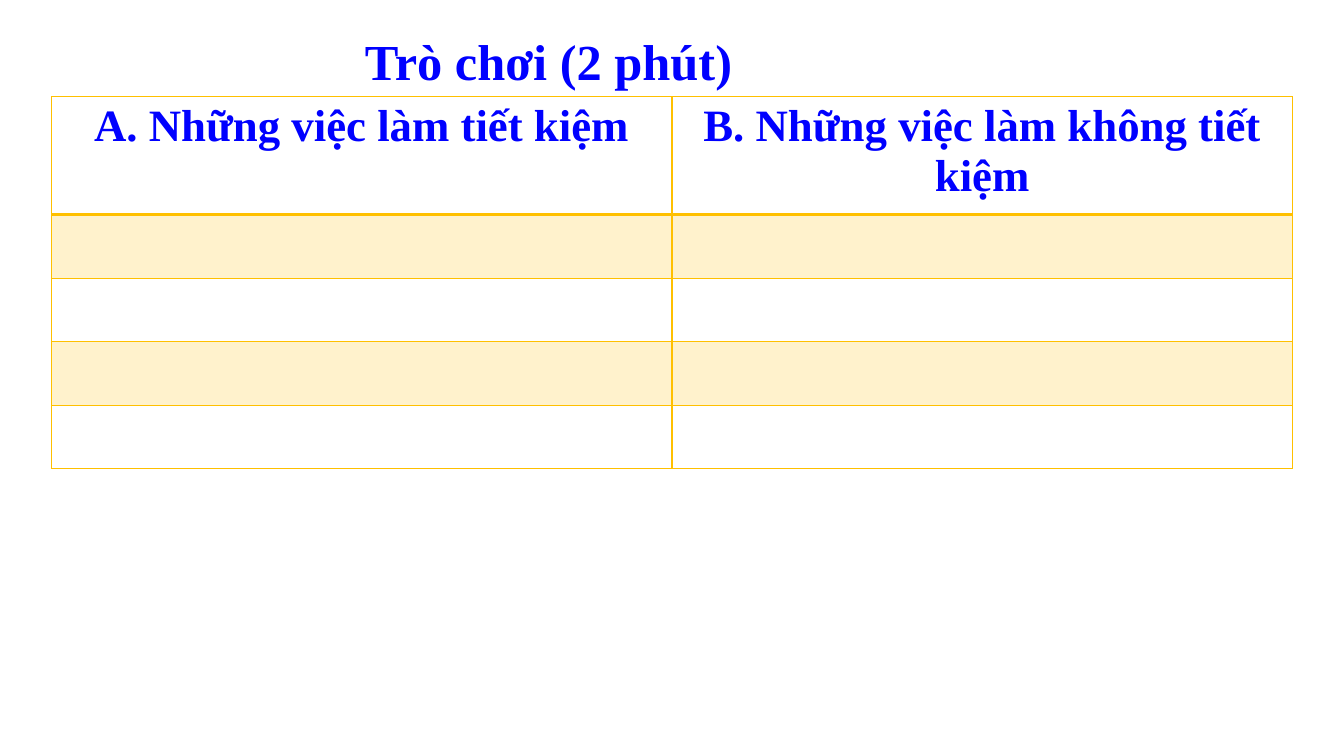
import lxml.etree
import pptx
import pptx.dml.color
import pptx.enum.text
import pptx.oxml.ns
import pptx.util

Inches = pptx.util.Inches
Pt = pptx.util.Pt
qn = pptx.oxml.ns.qn

COLORS = {"text": "0000FF", "gold": "FFC000", "white": "FFFFFF"}
FONT = "Times New Roman"
HEADINGS = ["A. Những việc làm tiết kiệm", "B. Những việc làm không tiết kiệm"]
ANSWER_ROWS = 4


class GameSlide:
    def __init__(self, deck):
        self.slide = deck.slides.add_slide(deck.slide_layouts[5])

    def style_text(self, frame, size, align):
        paragraph = frame.paragraphs[0]
        paragraph.alignment = align
        font = paragraph.runs[0].font
        font.name, font.size, font.bold = FONT, Pt(size), True
        font.color.rgb = pptx.dml.color.RGBColor.from_string(COLORS["text"])

    def title(self, text, left, top, width, height):
        heading = self.slide.shapes.title
        heading.left, heading.top = Inches(left), Inches(top)
        heading.width, heading.height = Inches(width), Inches(height)
        frame = heading.text_frame
        frame.text = text
        frame.word_wrap = True
        frame.auto_size = pptx.enum.text.MSO_AUTO_SIZE.SHAPE_TO_FIT_TEXT
        frame.vertical_anchor = pptx.enum.text.MSO_ANCHOR.TOP
        self.style_text(frame, 36, pptx.enum.text.PP_ALIGN.LEFT)

    def fill(self, cell, color, alpha=None):
        cell.fill.solid()
        cell.fill.fore_color.rgb = pptx.dml.color.RGBColor.from_string(COLORS[color])
        if alpha is not None:
            rgb = cell._tc.tcPr.find(f".//{qn('a:srgbClr')}")
            lxml.etree.SubElement(rgb, qn("a:alpha"), val=str(alpha * 1000))

    def borders(self, cell, widths):
        # Border lines must come before the fill, in the order L, R, T, B
        properties = cell._tc.get_or_add_tcPr()
        for place, (side, width) in enumerate(widths.items()):
            line = lxml.etree.Element(qn(f"a:ln{side}"), w=str(Pt(width)))
            solid = lxml.etree.SubElement(line, qn("a:solidFill"))
            lxml.etree.SubElement(solid, qn("a:srgbClr"), val=COLORS["gold"])
            properties.insert(place, line)

    def answer_table(self, left, top, width, header_height, row_height):
        height = header_height + ANSWER_ROWS * row_height
        table = self.slide.shapes.add_table(
            ANSWER_ROWS + 1, len(HEADINGS),
            Inches(left), Inches(top), Inches(width), Inches(height)).table
        table.horz_banding = False
        for row_index, row in enumerate(table.rows):
            row.height = Inches(row_height if row_index else header_height)
            for column, cell in enumerate(row.cells):
                if row_index == 0:
                    cell.text_frame.text = HEADINGS[column]
                    self.style_text(cell.text_frame, 32, pptx.enum.text.PP_ALIGN.CENTER)
                # Odd answer rows carry the pale gold band
                if row_index % 2:
                    self.fill(cell, "gold", alpha=20)
                else:
                    self.fill(cell, "white")
                self.borders(cell, {"L": 1, "R": 1,
                                    "T": 2 if row_index == 1 else 1,
                                    "B": 2 if row_index == 0 else 1})


def main():
    deck = pptx.Presentation()
    deck.slide_width, deck.slide_height = Inches(13.33), Inches(7.5)
    game = GameSlide(deck)

    # Title
    game.title("Trò chơi (2 phút)", 3.52, 0.25, 5.42, 0.71)

    # Two-column answer table
    game.answer_table(0.51, 0.96, 12.31, header_height=1.17, row_height=0.63)

    deck.save("out.pptx")


if __name__ == "__main__":
    main()
